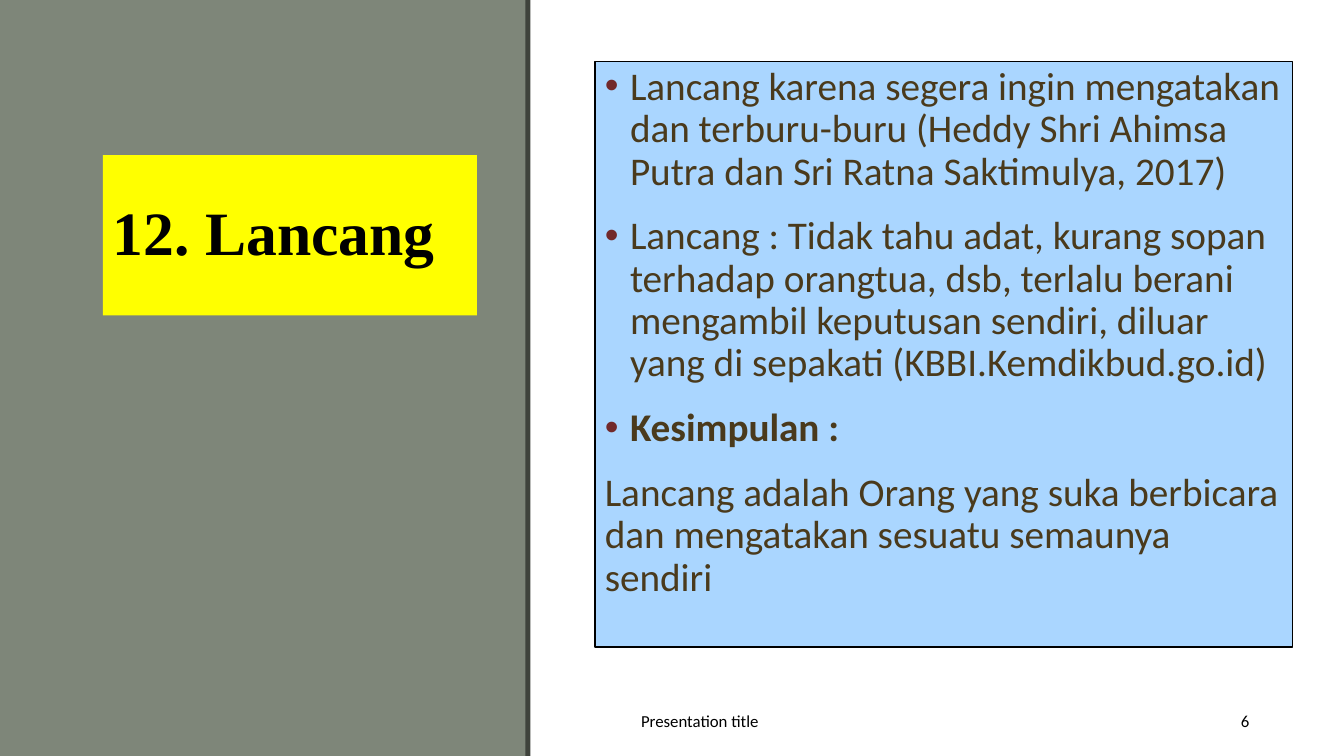
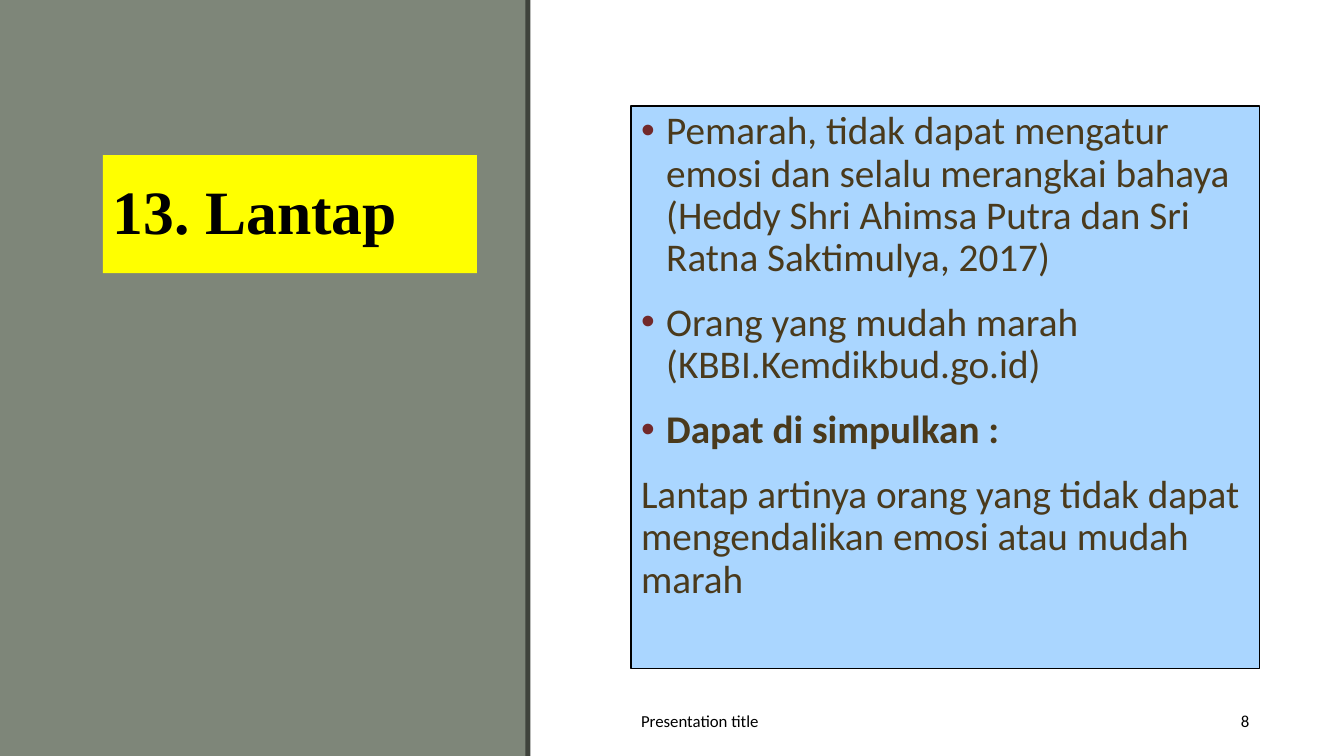
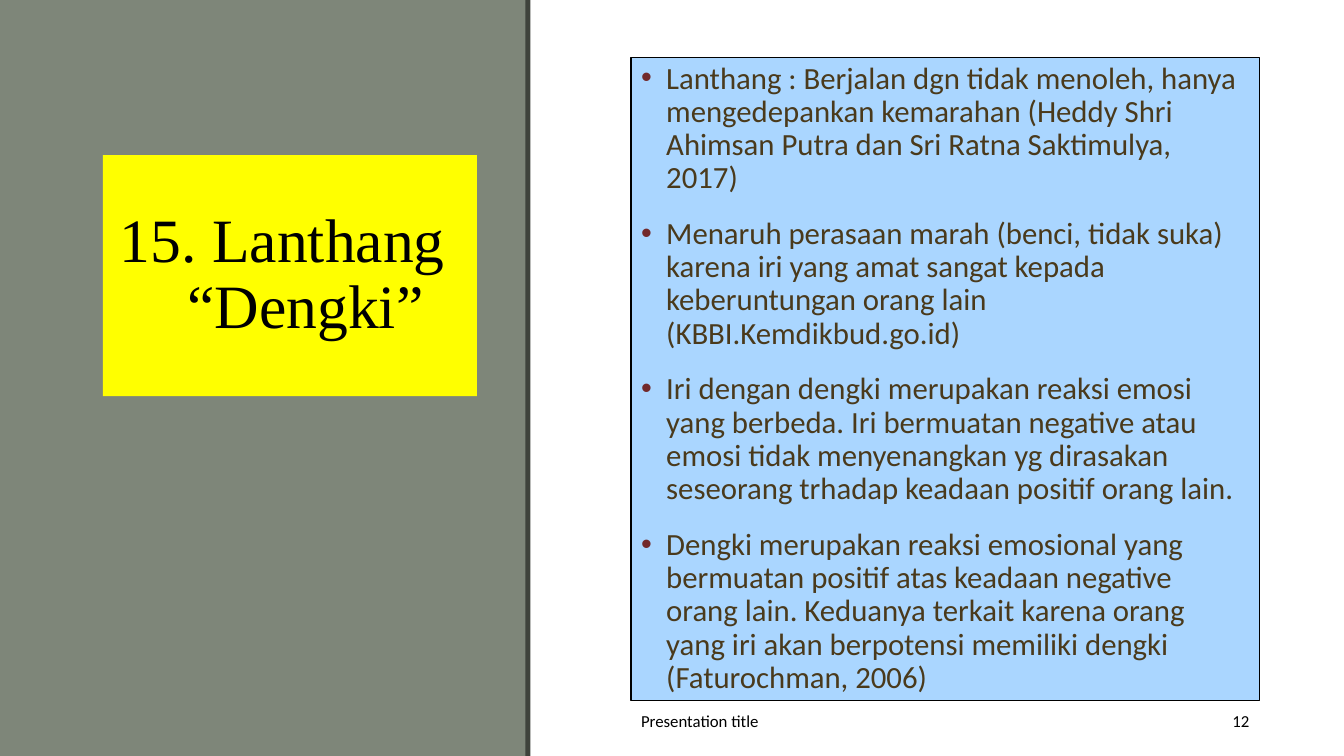
from dataclasses import dataclass

from lxml import etree
from pptx import Presentation
from pptx.dml.color import RGBColor
from pptx.enum.shapes import MSO_SHAPE
from pptx.enum.text import MSO_ANCHOR, PP_ALIGN
from pptx.oxml.ns import qn
from pptx.util import Inches, Pt

RECTANGLE = MSO_SHAPE.RECTANGLE
TOP, MIDDLE = MSO_ANCHOR.TOP, MSO_ANCHOR.MIDDLE
LEFT, RIGHT = PP_ALIGN.LEFT, PP_ALIGN.RIGHT


@dataclass(frozen=True)
class Theme:
    panel: str = "7E8679"
    panel_edge: str = "3F433C"
    title_fill: str = "FFFF00"
    body_fill: str = "AAD6FF"
    body_text: str = "4A3A1C"
    bullet: str = "72292A"
    black: str = "000000"
    title_font: str = "Times New Roman"
    body_font: str = "Calibri"
    title_size: float = 44
    body_size: float = 28
    dense_body_size: float = 22
    footer_size: float = 12
    line_spacing: float = 0.9


THEME = Theme()
SLIDE_WIDTH, SLIDE_HEIGHT = 13.33, 7.5
PANEL_WIDTH, EDGE_WIDTH = 5.24, 0.05
TITLE_LEFT, TITLE_TOP, TITLE_WIDTH = 1.02, 1.54, 3.71
BODY_LEFT, BODY_WIDTH = 6.26, 6.23
FOOTER_TOP, FOOTER_HEIGHT = 6.95, 0.4
FOOTER_TEXT_WIDTH, NUMBER_WIDTH = 4.5, 0.86
BULLET_INDENT = 0.25

# Each paragraph is (kind, text).
BULLET, HEADING, PLAIN = "bullet", "heading", "plain"

SLIDES = [
    {
        "title": "12. Lancang",
        "title_height": 1.59,
        "body_box": (5.9, 0.61, 6.92, 5.81),
        "number": "6",
        "paragraphs": [
            (BULLET, "Lancang karena segera ingin mengatakan dan terburu-buru "
                     "(Heddy Shri Ahimsa Putra dan Sri Ratna Saktimulya, 2017)"),
            (BULLET, "Lancang : Tidak tahu adat, kurang sopan terhadap orangtua, dsb, "
                     "terlalu berani mengambil keputusan sendiri, diluar yang di "
                     "sepakati (KBBI.Kemdikbud.go.id)"),
            (HEADING, "Kesimpulan :"),
            (PLAIN, "Lancang adalah Orang yang suka berbicara dan mengatakan sesuatu "
                    "semaunya sendiri"),
        ],
    },
    {
        "title": "13. Lantap",
        "title_height": 1.17,
        "body_box": (BODY_LEFT, 1.05, BODY_WIDTH, 5.58),
        "number": "8",
        "paragraphs": [
            (BULLET, "Pemarah, tidak dapat mengatur emosi dan selalu merangkai bahaya "
                     "(Heddy Shri Ahimsa Putra dan Sri Ratna Saktimulya, 2017)"),
            (BULLET, "Orang yang mudah marah (KBBI.Kemdikbud.go.id)"),
            (HEADING, "Dapat di simpulkan :"),
            (PLAIN, "Lantap artinya orang yang tidak dapat mengendalikan emosi atau "
                    "mudah marah"),
        ],
    },
    {
        "title": "15. Lanthang “Dengki”",
        "title_height": 2.39,
        "title_bold": False,
        "title_indent": (0.74, -0.67),
        "body_box": (BODY_LEFT, 0.57, BODY_WIDTH, 6.38),
        "body_size": THEME.dense_body_size,
        "number": "12",
        "paragraphs": [
            (BULLET, "Lanthang : Berjalan dgn tidak menoleh, hanya mengedepankan "
                     "kemarahan (Heddy Shri Ahimsan Putra dan Sri Ratna Saktimulya, "
                     "2017)"),
            (BULLET, "Menaruh perasaan marah (benci, tidak suka) karena iri yang amat "
                     "sangat kepada keberuntungan orang lain (KBBI.Kemdikbud.go.id)"),
            (BULLET, "Iri dengan dengki merupakan reaksi emosi yang berbeda. Iri "
                     "bermuatan negative atau emosi tidak menyenangkan yg dirasakan "
                     "seseorang trhadap keadaan positif orang lain."),
            (BULLET, "Dengki merupakan reaksi emosional yang bermuatan positif atas "
                     "keadaan negative orang lain. Keduanya terkait karena orang yang "
                     "iri akan berpotensi memiliki dengki (Faturochman, 2006)"),
        ],
    },
]


def add_rectangle(slide, box, fill, line=None):
    shape = slide.shapes.add_shape(RECTANGLE, *map(Inches, box))
    shape.shadow.inherit = False
    shape.fill.solid()
    shape.fill.fore_color.rgb = RGBColor.from_string(fill)
    if line:
        shape.line.color.rgb = RGBColor.from_string(line)
        shape.line.width = Pt(1)
    else:
        shape.line.fill.background()
    return shape


def prepare_frame(shape, anchor):
    text_frame = shape.text_frame
    text_frame.word_wrap = True
    text_frame.vertical_anchor = anchor
    return text_frame


def format_runs(paragraph, font_name, size, color, bold=False):
    for run in paragraph.runs:
        run.font.name = font_name
        run.font.size = Pt(size)
        run.font.bold = bold
        run.font.color.rgb = RGBColor.from_string(color)


def set_indent(paragraph, margin, first_line):
    properties = paragraph._p.get_or_add_pPr()
    properties.set("marL", str(Inches(margin)))
    properties.set("indent", str(Inches(first_line)))
    return properties


def add_bullet(paragraph):
    properties = set_indent(paragraph, BULLET_INDENT, -BULLET_INDENT)
    bullet_color = etree.SubElement(properties, qn("a:buClr"))
    etree.SubElement(bullet_color, qn("a:srgbClr"), val=THEME.bullet)
    etree.SubElement(properties, qn("a:buFont"), typeface="Arial")
    etree.SubElement(properties, qn("a:buChar"), char="•")


def add_side_panel(slide):
    add_rectangle(slide, (0, 0, PANEL_WIDTH, SLIDE_HEIGHT), THEME.panel)
    edge_left = round(PANEL_WIDTH - EDGE_WIDTH / 2, 2)
    add_rectangle(slide, (edge_left, 0, EDGE_WIDTH, SLIDE_HEIGHT), THEME.panel_edge)


def add_title(slide, box, text, bold=True, indent=(0, 0)):
    shape = add_rectangle(slide, box, THEME.title_fill)
    paragraph = prepare_frame(shape, MIDDLE).paragraphs[0]
    paragraph.text = text
    paragraph.alignment = LEFT
    paragraph.line_spacing = THEME.line_spacing
    set_indent(paragraph, *indent)
    format_runs(paragraph, THEME.title_font, THEME.title_size, THEME.black, bold)


def add_body(slide, box, paragraphs, size):
    shape = add_rectangle(slide, box, THEME.body_fill, THEME.black)
    text_frame = prepare_frame(shape, TOP)
    for index, (kind, text) in enumerate(paragraphs):
        paragraph = text_frame.add_paragraph() if index else text_frame.paragraphs[0]
        paragraph.text = text
        if kind != PLAIN:
            add_bullet(paragraph)
        paragraph.alignment = LEFT
        paragraph.line_spacing = THEME.line_spacing
        paragraph.space_before = Pt(10 if index else 0)
        paragraph.space_after = Pt(6)
        format_runs(paragraph, THEME.body_font, size, THEME.body_text, kind == HEADING)


def add_footer(slide, box, number):
    """Place the footer text at the left of the box and the number at its right."""
    left, top, width, height = box
    number_left = left + width - NUMBER_WIDTH
    for text, part_left, part_width, alignment in (
        ("Presentation title", left, FOOTER_TEXT_WIDTH, LEFT),
        (number, number_left, NUMBER_WIDTH, RIGHT),
    ):
        part_box = (part_left, top, part_width, height)
        shape = slide.shapes.add_textbox(*map(Inches, part_box))
        paragraph = prepare_frame(shape, MIDDLE).paragraphs[0]
        paragraph.text = text
        paragraph.alignment = alignment
        format_runs(paragraph, THEME.body_font, THEME.footer_size, THEME.black)


def add_term_slide(presentation, content):
    slide = presentation.slides.add_slide(presentation.slide_layouts[6])
    add_side_panel(slide)
    title_box = (TITLE_LEFT, TITLE_TOP, TITLE_WIDTH, content["title_height"])
    add_title(slide, title_box, content["title"],
              content.get("title_bold", True), content.get("title_indent", (0, 0)))
    add_body(slide, content["body_box"], content["paragraphs"],
             content.get("body_size", THEME.body_size))
    add_footer(slide, (BODY_LEFT, FOOTER_TOP, BODY_WIDTH, FOOTER_HEIGHT),
               content["number"])


def main():
    presentation = Presentation()
    presentation.slide_width = Inches(SLIDE_WIDTH)
    presentation.slide_height = Inches(SLIDE_HEIGHT)
    for content in SLIDES:
        add_term_slide(presentation, content)
    presentation.save("out.pptx")


if __name__ == "__main__":
    main()
